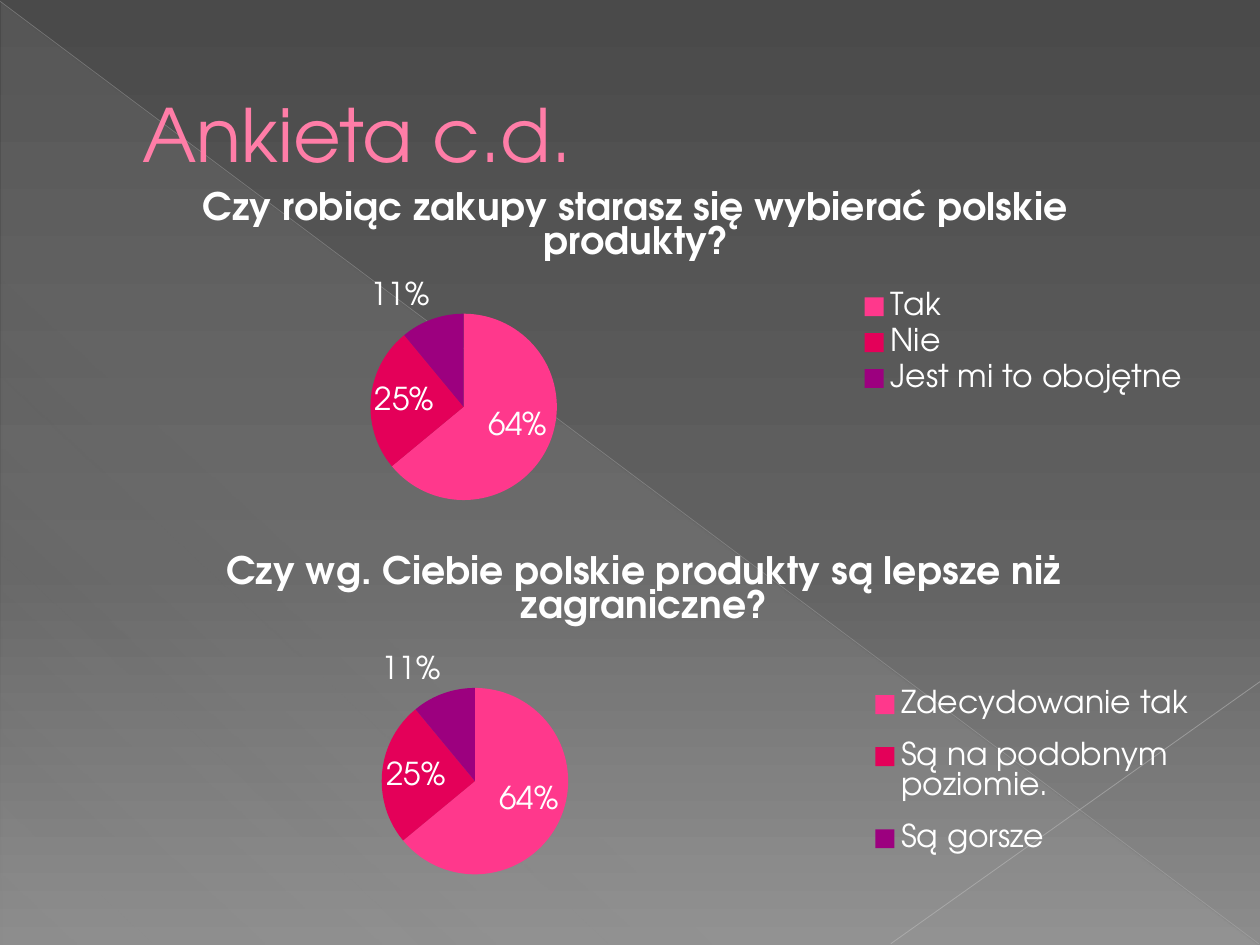
import copy
from dataclasses import dataclass

import lxml.etree
import pptx
import pptx.chart.data
import pptx.dml.color
import pptx.enum.chart
import pptx.enum.shapes
import pptx.enum.text
import pptx.oxml.ns
import pptx.util

Inches = pptx.util.Inches
qn = pptx.oxml.ns.qn
FONT = "TeX Gyre Adventor"
COLORS = {
    "text": "FFFFFF",
    "title": "FF7DA7",
    "first": "FF388C",
    "second": "E40059",
    "third": "9C007F",
    "diagonal": "BFBFBF",
    "corner": "C6C6C6",
    "veil": "D2D2D2",
    "top": "4A4A4A",
    "middle": "626262",
    "bottom": "8C8C8C",
}
SLICES = ("first", "second", "third")
PIE_SIZE = 1.48


@dataclass
class Box:
    left: float
    top: float
    width: float
    height: float

    def lengths(self) -> list:
        return [Inches(n) for n in (self.left, self.top, self.width, self.height)]


@dataclass
class Stop:
    position: int
    color: str
    opacity: int = 100


@dataclass
class Line:
    start: tuple
    end: tuple
    color: str
    width: float
    opacity: int


@dataclass
class Survey:
    question: str
    series: str
    answers: tuple
    frame: Box
    pie: Box
    legend: Box


LINES = [
    Line((0, 0.01), (9.99, 7.49), "diagonal", 0.39, 35),
    Line((10, 5.41), (7.07, 7.49), "corner", 0.47, 45),
]
BETTER = "Czy wg. Ciebie polskie produkty są lepsze niż zagraniczne?"
SURVEYS = [
    Survey("Czy robiąc zakupy starasz się wybierać polskie produkty?", "Series 1",
           ("Tak", "Nie", "Jest mi to obojętne"), Box(0.55, 1.33, 9, 2.81),
           Box(2.94, 2.49, PIE_SIZE, PIE_SIZE), Box(6.8, 2.27, 2.65, 0.9)),
    Survey(BETTER, BETTER,
           ("Zdecydowanie tak", "Są na podobnym poziomie.", "Są gorsze"),
           Box(0.23, 4.22, 9.77, 2.89),
           Box(3.03, 5.46, PIE_SIZE, PIE_SIZE), Box(6.89, 5.3, 2.6, 1.65)),
]


def rgb(name: str) -> pptx.dml.color.RGBColor:
    return pptx.dml.color.RGBColor.from_string(COLORS[name])


def set_opacity(color, percent: int) -> None:
    lxml.etree.SubElement(color, qn("a:alpha")).set("val", str(percent * 1000))


def set_gradient(fill, element, stops: list, angle: int) -> None:
    fill.gradient()
    fill.gradient_angle = 360 - angle
    stop_list = next(element.iter(qn("a:gsLst")))
    for old in list(stop_list):
        stop_list.remove(old)
    for stop in stops:
        node = lxml.etree.SubElement(stop_list, qn("a:gs"))
        node.set("pos", str(stop.position * 1000))
        color = lxml.etree.SubElement(node, qn("a:srgbClr"))
        color.set("val", COLORS[stop.color])
        if stop.opacity < 100:
            set_opacity(color, stop.opacity)


def set_font(font, size: float, color: str, bold: bool = False) -> None:
    font.name, font.size, font.bold = FONT, pptx.util.Pt(size), bold
    font.color.rgb = rgb(color)


def add_line(slide, line: Line) -> None:
    connector = slide.shapes.add_connector(
        pptx.enum.shapes.MSO_CONNECTOR.STRAIGHT,
        *[Inches(n) for n in line.start + line.end])
    connector.line.color.rgb = rgb(line.color)
    connector.line.width = pptx.util.Pt(line.width)
    properties = connector._element.spPr
    set_opacity(next(properties.iter(qn("a:srgbClr"))), line.opacity)
    lxml.etree.SubElement(properties, qn("a:effectLst"))


def set_layout(parent, before: str, frame: Box, area: Box, inner: bool) -> None:
    for old in parent.findall(qn("c:layout")):
        parent.remove(old)
    layout = lxml.etree.Element(qn("c:layout"))
    manual = lxml.etree.SubElement(layout, qn("c:manualLayout"))
    settings = [("layoutTarget", "inner")] if inner else []
    settings += [
        ("xMode", "edge"), ("yMode", "edge"),
        ("x", round((area.left - frame.left) / frame.width, 4)),
        ("y", round((area.top - frame.top) / frame.height, 4)),
        ("w", round(area.width / frame.width, 4)),
        ("h", round(area.height / frame.height, 4)),
    ]
    for tag, value in settings:
        lxml.etree.SubElement(manual, qn("c:" + tag)).set("val", str(value))
    parent.find(qn(before)).addprevious(layout)


def add_survey(slide, survey: Survey) -> None:
    data = pptx.chart.data.CategoryChartData()
    data.categories = survey.answers
    data.add_series(survey.series, (64, 25, 11))
    chart = slide.shapes.add_chart(
        pptx.enum.chart.XL_CHART_TYPE.PIE, *survey.frame.lengths(), data).chart
    set_font(chart.font, 18, "text")
    chart.has_title = True
    title = chart.chart_title.text_frame
    title.text = survey.question
    set_font(title.paragraphs[0].runs[0].font, 21.6, "text", bold=True)
    chart.has_legend = True
    chart.legend.position = pptx.enum.chart.XL_LEGEND_POSITION.RIGHT
    chart.legend.include_in_layout = False
    set_font(chart.legend.font, 18, "text")

    plot = chart.plots[0]
    plot.vary_by_categories = True
    for index, color in enumerate(SLICES):
        fill = plot.series[0].points[index].format.fill
        fill.solid()
        fill.fore_color.rgb = rgb(color)
    plot.has_data_labels = True
    labels = plot.data_labels
    labels.show_percentage, labels.show_value = True, False
    labels.number_format, labels.number_format_is_linked = "0%", False
    labels.position = pptx.enum.chart.XL_LABEL_POSITION.BEST_FIT
    set_font(labels.font, 18, "text")

    plot_area = next(chart._chartSpace.iter(qn("c:plotArea")))
    set_layout(plot_area, "c:pieChart", survey.frame, survey.pie, True)
    legend = next(chart._chartSpace.iter(qn("c:legend")))
    set_layout(legend, "c:overlay", survey.frame, survey.legend, False)


def add_title(slide, text: str, box: Box) -> None:
    title = slide.shapes.title
    title.left, title.top, title.width, title.height = box.lengths()
    frame = title.text_frame
    frame.text = text
    frame.vertical_anchor = pptx.enum.text.MSO_ANCHOR.MIDDLE
    para = frame.paragraphs[0]
    para.alignment = pptx.enum.text.PP_ALIGN.LEFT
    para._p.get_or_add_pPr().set("marL", str(Inches(0.53)))
    set_font(para.runs[0].font, 42, "title")
    slide.shapes._spTree.append(title._element)


def main() -> None:
    deck = pptx.Presentation()
    deck.slide_width, deck.slide_height = Inches(10), Inches(7.5)
    slide = deck.slides.add_slide(deck.slide_layouts[5])
    set_gradient(slide.background.fill, slide._element,
                 [Stop(0, "top"), Stop(60, "middle"), Stop(100, "bottom")], 90)
    veil = slide.shapes.add_shape(
        pptx.enum.shapes.MSO_SHAPE.RIGHT_TRIANGLE, *Box(0.01, 0.02, 9.98, 7.48).lengths())
    veil.shadow.inherit = False
    veil.line.fill.background()
    set_gradient(veil.fill, veil._element,
                 [Stop(0, "veil", 10), Stop(70, "veil", 8), Stop(100, "veil", 1)], 133)
    for line in LINES:
        add_line(slide, line)
    for survey in SURVEYS:
        add_survey(slide, survey)
    add_title(slide, "Ankieta c.d.", Box(0.5, 0.29, 9, 1.53))
    deck.save("out.pptx")


if __name__ == "__main__":
    main()
